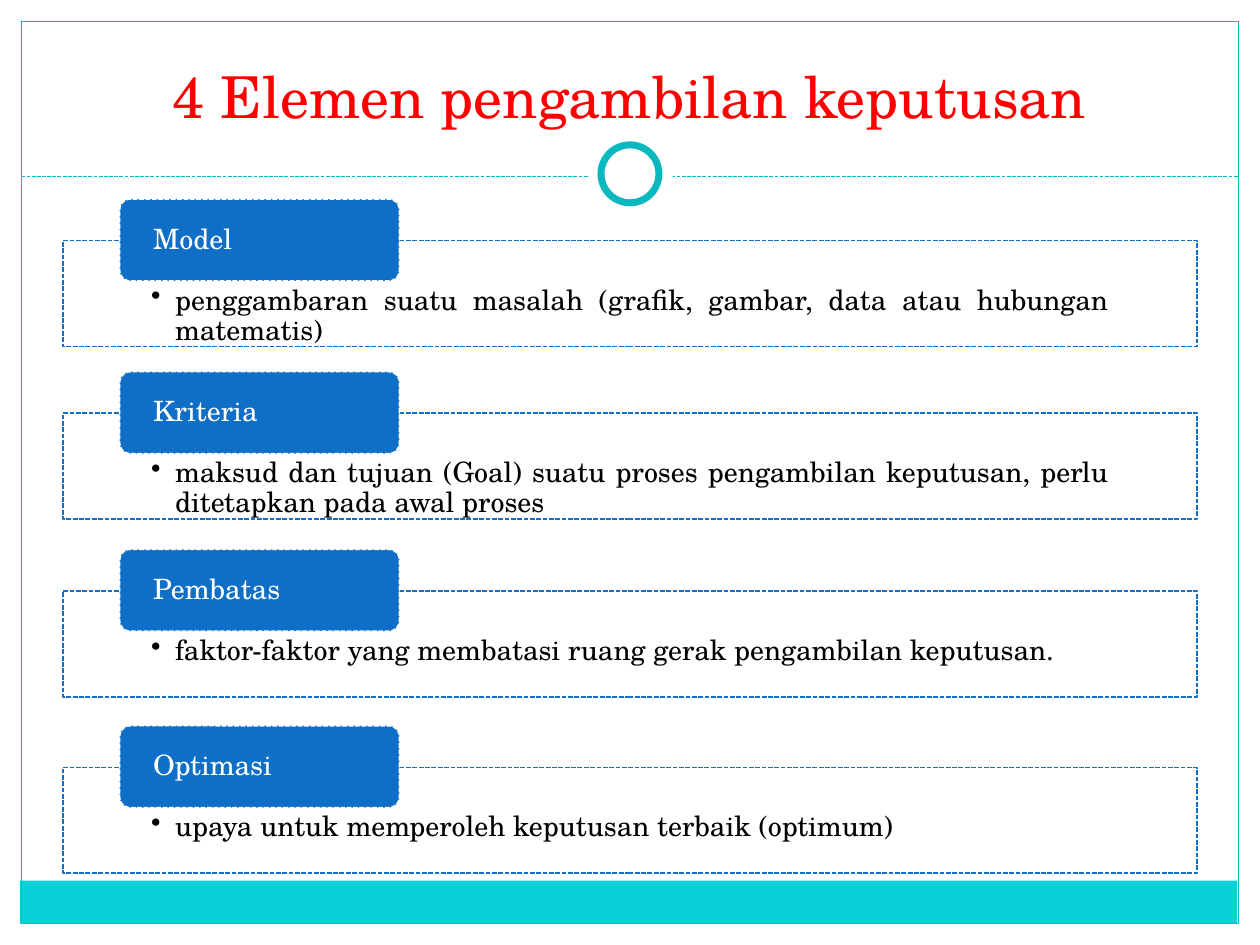
from lxml.etree import SubElement
from pptx import Presentation
from pptx.dml.color import RGBColor
from pptx.enum.dml import MSO_LINE
from pptx.enum.shapes import MSO_CONNECTOR, MSO_SHAPE
from pptx.enum.text import MSO_ANCHOR, PP_ALIGN
from pptx.oxml.ns import qn
from pptx.util import Inches, Pt

WHITE = RGBColor(0xFF, 0xFF, 0xFF)
BLACK = RGBColor(0, 0, 0)
RED = RGBColor(0xFF, 0, 0)
BLUE = RGBColor(0x0F, 0x6F, 0xC6)
AQUA = RGBColor(0x0B, 0xD0, 0xD9)
TEAL = RGBColor(0x0A, 0xB8, 0xBF)
FONT = "TeX Gyre Schola"

ITEMS = [
    (1.58, "Model", PP_ALIGN.JUSTIFY,
     "penggambaran suatu masalah (grafik, gambar, data atau hubungan matematis)"),
    (2.95, "Kriteria", PP_ALIGN.JUSTIFY,
     "maksud dan tujuan (Goal) suatu proses pengambilan keputusan, "
     "perlu ditetapkan pada awal proses"),
    (4.36, "Pembatas", PP_ALIGN.LEFT,
     "faktor-faktor yang membatasi ruang gerak pengambilan keputusan."),
    (5.76, "Optimasi", PP_ALIGN.LEFT,
     "upaya untuk memperoleh keputusan terbaik (optimum)"),
]


def apply(item, form):
    for name, value in form.items():
        setattr(item, name, value)


def stroke(line, color, width, dash=None):
    line.color.rgb = color
    apply(line, {"width": Pt(width), "dash_style": dash})


def add_box(slide, kind, area, fill=None, edge=None):
    shape = slide.shapes.add_shape(kind, *map(Inches, area))
    shape.shadow.inherit = False
    if fill is None:
        shape.fill.background()
    else:
        shape.fill.solid()
        shape.fill.fore_color.rgb = fill
    if edge is None:
        shape.line.fill.background()
    else:
        stroke(shape.line, *edge)
    return shape


def add_rule(slide, left, right, top):
    rule = slide.shapes.add_connector(
        MSO_CONNECTOR.STRAIGHT, *map(Inches, (left, top, right, top)))
    stroke(rule.line, TEAL, 0.75, MSO_LINE.SQUARE_DOT)
    SubElement(rule._element.spPr, qn("a:effectLst"))


def write(shape, text, color, size, frame, para):
    body = shape.text_frame
    apply(body, {"word_wrap": True, **frame})
    line = body.paragraphs[0]
    apply(line, para)
    run = line.add_run()
    run.text = text
    apply(run.font, {"name": FONT, "size": Pt(size)})
    run.font.color.rgb = color
    return line


def inset(side, top, bottom):
    return {"margin_left": Inches(side), "margin_right": Inches(side),
            "margin_top": Inches(top), "margin_bottom": Inches(bottom)}


def add_bullet(line):
    props = line._p.get_or_add_pPr()
    props.set("lvl", "1")
    props.set("marL", str(Inches(0.19)))
    props.set("indent", str(-Inches(0.19)))
    SubElement(props, qn("a:buChar"), char="•")


def add_panel(slide, top, text, align):
    panel = add_box(slide, MSO_SHAPE.RECTANGLE, (0.5, top, 9, 0.84), WHITE,
                    (BLUE, 0.9, MSO_LINE.SQUARE_DOT))
    tint = panel._element.spPr.find(qn("a:solidFill"))[0]
    SubElement(tint, qn("a:alpha"), val="90000")
    line = write(panel, text, BLACK, 16,
                 {"vertical_anchor": MSO_ANCHOR.TOP, **inset(0.7, 0.36, 0.12)},
                 {"alignment": align, "line_spacing": 0.9,
                  "space_after": Pt(2.4)})
    add_bullet(line)


def add_label(slide, top, text):
    label = add_box(slide, MSO_SHAPE.ROUNDED_RECTANGLE, (0.95, top, 2.22, 0.65),
                    BLUE, (WHITE, 0.9, MSO_LINE.SQUARE_DOT))
    label.adjustments[0] = 0.13
    write(label, text, WHITE, 16,
          {"vertical_anchor": MSO_ANCHOR.MIDDLE, **inset(0.24, 0.01, 0.01)},
          {"alignment": PP_ALIGN.LEFT, "line_spacing": 0.9,
           "space_after": Pt(5.6)})


def add_frame(slide):
    rect, oval = MSO_SHAPE.RECTANGLE, MSO_SHAPE.OVAL
    for area in ((0, 0, 10, 1.52), (0, 0, 0.17, 7.5), (9.83, 0, 0.17, 7.5)):
        add_box(slide, rect, area, WHITE)
    add_box(slide, rect, (0.16, 6.99, 9.66, 0.34), AQUA)
    add_box(slide, rect, (0.17, 0.17, 9.66, 7.16), None, (TEAL, 0.75))
    add_rule(slide, 0.17, 9.83, 1.4)
    add_box(slide, oval, (4.67, 1.05, 0.67, 0.67), WHITE)
    add_box(slide, oval, (4.77, 1.15, 0.46, 0.46), WHITE, (TEAL, 4))


def add_title(slide, text):
    box = slide.shapes.add_textbox(*map(Inches, (0.33, 0.25, 9.33, 0.83)))
    write(box, text, RED, 33, {"vertical_anchor": MSO_ANCHOR.BOTTOM},
          {"alignment": PP_ALIGN.CENTER})


def main():
    deck = Presentation()
    apply(deck, {"slide_width": Inches(10), "slide_height": Inches(7.5)})
    slide = deck.slides.add_slide(deck.slide_layouts[6])
    add_frame(slide)
    add_title(slide, "4 Elemen pengambilan keputusan")
    for top, name, align, text in ITEMS:
        add_panel(slide, top + 0.33, text, align)
        add_label(slide, top, name)
    deck.save("out.pptx")


if __name__ == "__main__":
    main()
